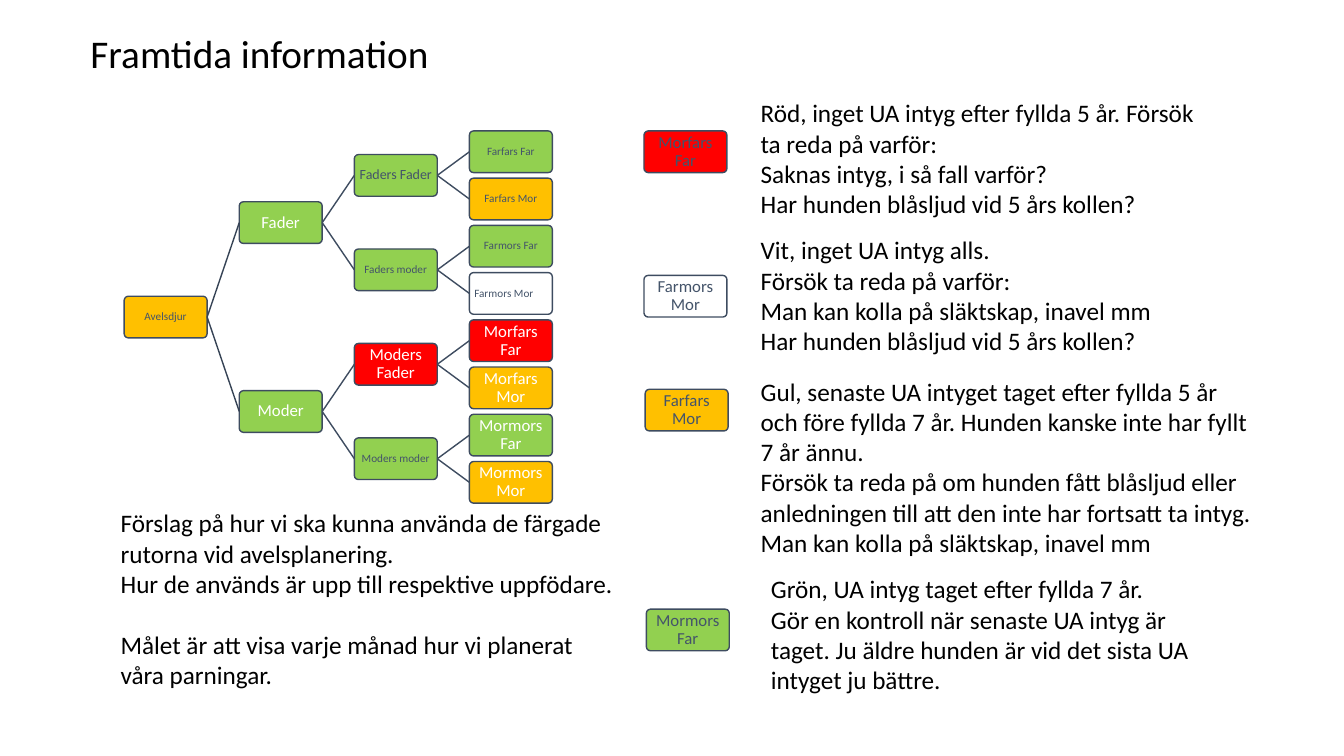
from pptx import Presentation
from pptx.dml.color import RGBColor
from pptx.enum.shapes import MSO_CONNECTOR, MSO_SHAPE
from pptx.enum.text import MSO_ANCHOR, MSO_AUTO_SIZE, PP_ALIGN
from pptx.oxml.xmlchemy import OxmlElement
from pptx.util import Cm, Pt

color = RGBColor.from_string
GREEN, YELLOW, RED, CLEAR = "92D050", "FFC000", "FF0000", None
WHITE, SLATE, BLACK = "FFFFFF", "44546A", "000000"
BORDER, ROOT_LINK = "3E4C60", "364355"
BOX_WIDTH, BOX_HEIGHT = 2.09, 1.05
TREE_LEFT, TREE_TOP = 3.13, 3.3
COLUMN_STEP, ROW_STEP = 2.9, 1.19
LEAVES = 8


def write(shape, lines, size, hex_color, frame_format, para_format):
    """Fill the shape with one paragraph per line, all in the same style."""
    frame = shape.text_frame
    for name, value in frame_format.items():
        setattr(frame, name, value)
    for index, line in enumerate(lines):
        para = frame.add_paragraph() if index else frame.paragraphs[0]
        for name, value in para_format.items():
            setattr(para, name, value)
        span = para.add_run()
        span.text = line
        span.font.name = "Calibri"
        span.font.size = Pt(size)
        span.font.color.rgb = color(hex_color)


def add_dog_box(left, top, label, fill, size, hex_color):
    box = page.shapes.add_shape(MSO_SHAPE.ROUNDED_RECTANGLE, Cm(left), Cm(top),
                                Cm(BOX_WIDTH), Cm(BOX_HEIGHT))
    box.adjustments[0] = 0.1
    box.shadow.inherit = False
    if fill:
        box.fill.solid()
        box.fill.fore_color.rgb = color(fill)
    else:
        box.fill.background()
    box.line.color.rgb = color(BORDER)
    box.line.width = Pt(1)
    write(box, [label], size, hex_color, BOX_FRAME, BOX_PARA)
    return box


BOX_FRAME = {
    "word_wrap": True, "vertical_anchor": MSO_ANCHOR.MIDDLE,
    "margin_left": Cm(0.03), "margin_right": Cm(0.03),
    "margin_top": Cm(0.03), "margin_bottom": Cm(0.03),
}
BOX_PARA = {"alignment": PP_ALIGN.CENTER, "line_spacing": 0.9}
TEXT_FRAME = {"word_wrap": True, "auto_size": MSO_AUTO_SIZE.SHAPE_TO_FIT_TEXT}
TEXT_PARA = {"alignment": PP_ALIGN.LEFT}

deck = Presentation()
deck.slide_width, deck.slide_height = Cm(33.87), Cm(19.05)
page = deck.slides.add_slide(deck.slide_layouts[6])

# Pedigree: each generation has twice as many dogs as the one before
generations = [
    [("Avelsdjur", YELLOW, 8, SLATE)],
    [("Fader", GREEN, 12, WHITE), ("Moder", GREEN, 12, WHITE)],
    [("Faders Fader", GREEN, 10, SLATE), ("Faders moder", GREEN, 8, SLATE),
     ("Moders Fader", RED, 12, WHITE), ("Moders moder", GREEN, 8, SLATE)],
    [("Farfars Far", GREEN, 8, SLATE), ("Farfars Mor", YELLOW, 8, SLATE),
     ("Farmors Far", GREEN, 8, SLATE), ("Farmors Mor", CLEAR, 8, SLATE),
     ("Morfars Far", RED, 12, WHITE), ("Morfars Mor", YELLOW, 12, WHITE),
     ("Mormors Far", GREEN, 12, WHITE), ("Mormors Mor", YELLOW, 12, WHITE)],
]
children = []
for depth, dogs in enumerate(generations):
    parents, children = children, []
    left = TREE_LEFT + depth * COLUMN_STEP
    rows_per_dog = LEAVES / len(dogs)
    for index, (label, fill, size, hex_color) in enumerate(dogs):
        top = TREE_TOP + ROW_STEP * ((index + 0.5) * rows_per_dog - 0.5)
        box = add_dog_box(left, top, label, fill, size, hex_color)
        if label == "Farmors Mor":
            box.text_frame.margin_right = Cm(0.38)
        children.append(box)
        if not parents:
            continue
        parent = parents[index // 2]
        link = page.shapes.add_connector(
            MSO_CONNECTOR.STRAIGHT,
            parent.left + parent.width, parent.top + parent.height // 2,
            box.left, box.top + box.height // 2)
        link.line.color.rgb = color(ROOT_LINK if depth == 1 else BORDER)
        link.line.width = Pt(1)
        link._element.spPr.append(OxmlElement("a:effectLst"))

# Colour key
for left, top, label, fill in [
    (16.23, 3.3, "Morfars Far", RED),
    (16.23, 6.94, "Farmors Mor", CLEAR),
    (16.26, 9.81, "Farfars Mor", YELLOW),
    (16.29, 15.35, "Mormors Far", GREEN),
]:
    add_dog_box(left, top, label, fill, 12, SLATE)

# Title, explanations and proposal
for left, top, width, height, size, lines in [
    (2.03, 0.61, 12.34, 1.45, 28, ["Framtida information"]),
    (18.92, 2.34, 11.43, 3.33, 18, [
        "Röd, inget UA intyg efter fyllda 5 år. Försök ta reda på varför:",
        "Saknas intyg, i så fall varför?",
        "Har hunden blåsljud vid 5 års kollen?"]),
    (18.92, 5.79, 13, 3.33, 18, [
        "Vit, inget UA intyg alls.",
        "Försök ta reda på varför:",
        "Man kan kolla på släktskap, inavel mm",
        "Har hunden blåsljud vid 5 års kollen?"]),
    (18.92, 9.35, 13, 4.88, 18, [
        "Gul, senaste UA intyget taget efter fyllda 5 år och före fyllda 7 år. "
        "Hunden kanske inte har fyllt 7 år ännu.",
        "Försök ta reda på om hunden fått blåsljud eller anledningen till att "
        "den inte har fortsatt ta intyg.",
        "Man kan kolla på släktskap, inavel mm"]),
    (19.18, 14.33, 11.43, 3.33, 18, [
        "Grön, UA intyg taget efter fyllda 7 år.",
        "Gör en kontroll när senaste UA intyg är taget. Ju äldre hunden är "
        "vid det sista UA intyget ju bättre."]),
    (2.79, 12.67, 13.11, 4.88, 18, [
        "Förslag på hur vi ska kunna använda de färgade",
        "rutorna vid avelsplanering.",
        "Hur de används är upp till respektive uppfödare.",
        "Målet är att visa varje månad hur vi planerat",
        "våra parningar."]),
]:
    box = page.shapes.add_textbox(Cm(left), Cm(top), Cm(width), Cm(height))
    write(box, lines, size, BLACK, TEXT_FRAME, TEXT_PARA)

proposal = box
proposal.text_frame.paragraphs[3].space_before = Pt(22)

deck.save("out.pptx")
